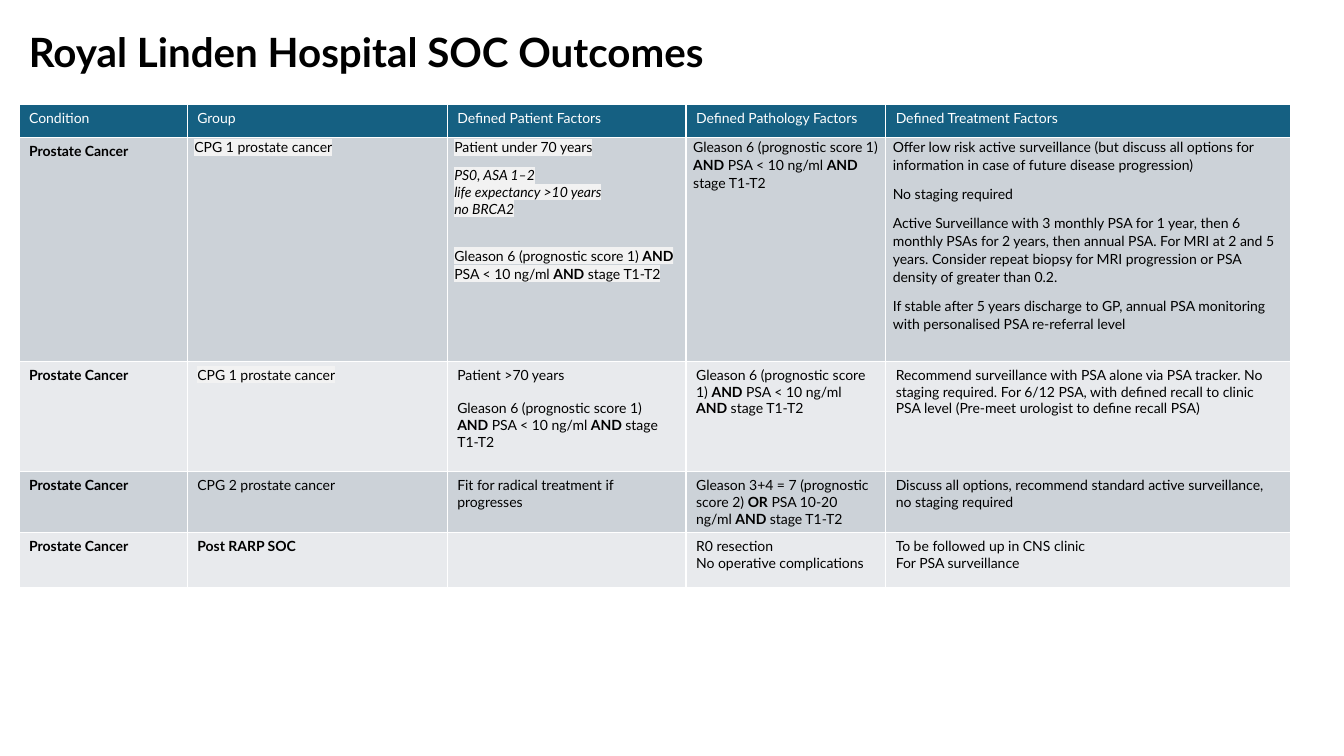
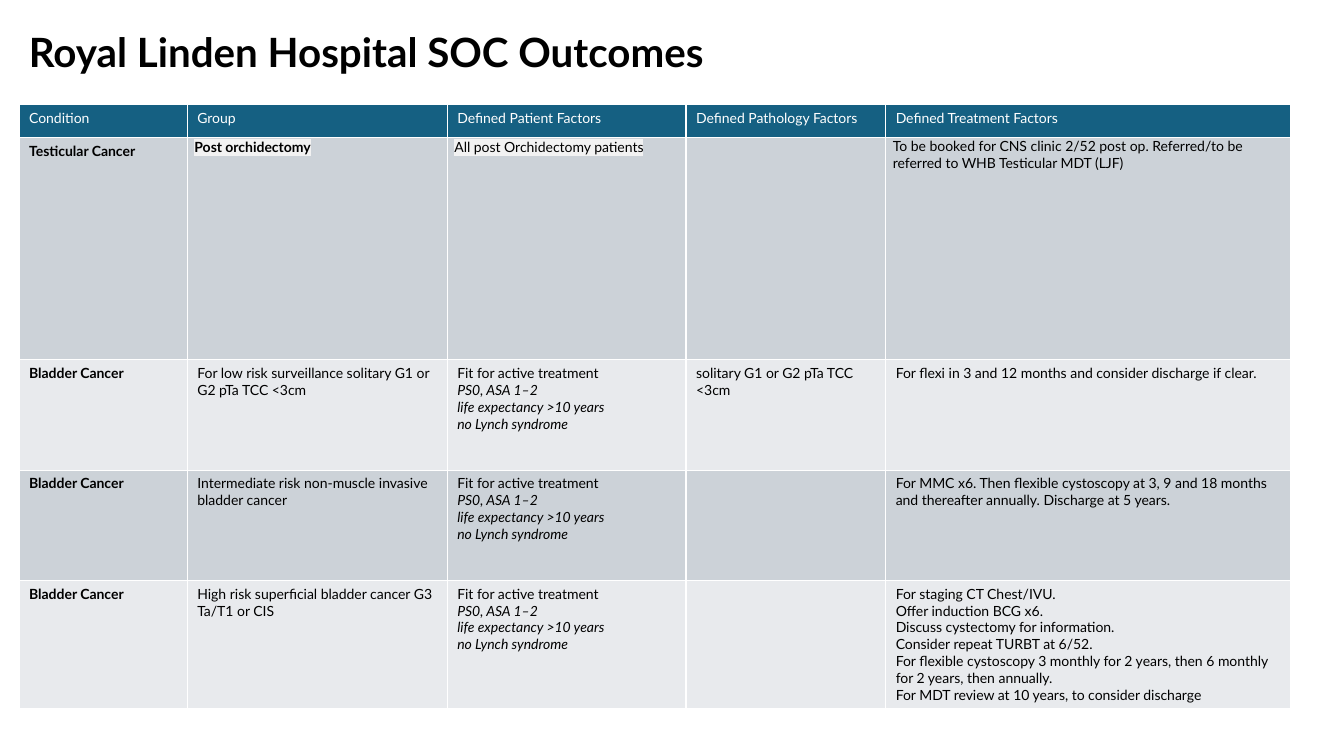
"""Build two slides of hospital outcome tables."""
from dataclasses import dataclass

from lxml import etree
from pptx import Presentation
from pptx.dml.color import RGBColor
from pptx.enum import text
from pptx.oxml import ns
from pptx.util import Cm, Pt


@dataclass(frozen=True)
class Theme:
    font: str = "Lato"
    title: float = 28.8
    body: float = 10
    ink: str = "000000"
    white: str = "FFFFFF"
    head: str = "156082"
    bands: tuple = ("CCD2D8", "E8EAED")
    mark: str = "F2F2F2"
    rule: float = 1


@dataclass
class Para:
    text: str
    slant: bool = False
    line: float = 1
    after: float = 0


@dataclass
class Entry:
    paras: tuple
    tight: bool = False
    mark: bool = False


THEME = Theme()
TITLE = "Royal Linden Hospital SOC Outcomes"
HEADS = ("Condition", "Group", "Defined Patient Factors",
         "Defined Pathology Factors", "Defined Treatment Factors")
WIDTHS = (4.24, 6.55, 6.02, 5.03, 10.21)


def plain(*lines, **look):
    return Entry(tuple(Para(line) for line in lines), **look)


def loose(*lines, mark=False):
    paras = tuple(Para(line, line=1.07, after=8) for line in lines)
    return Entry(paras, tight=True, mark=mark)


def slants(*lines):
    return tuple(Para(line, slant=True) for line in lines)


FITNESS = ("PS0, ASA 1–2", "life expectancy >10 years")
GLEASON = "Gleason 6 (prognostic score 1) *AND* PSA < 10 ng/ml *AND* stage T1-T2"
PROSTATE = plain("*Prostate Cancer*")
BLADDER = plain("*Bladder Cancer*")
ACTIVE = Entry((Para("Fit for active treatment"),
                *slants(*FITNESS, "no Lynch syndrome")))
YOUNG = Entry((Para("Patient under 70 years", line=1.07, after=8),
               *slants(*FITNESS), Para("no BRCA2", True, after=20.8),
               Para(GLEASON, line=1.07, after=8)), tight=True, mark=True)

FIRST = (
    (5.64, PROSTATE, loose("CPG 1 prostate cancer", mark=True), YOUNG,
     loose(GLEASON),
     loose("Offer low risk active surveillance (but discuss all options for "
           "information in case of future disease progression)",
           "No staging required",
           "Active Surveillance with 3 monthly PSA for 1 year, then 6 monthly "
           "PSAs for 2 years, then annual PSA. For MRI at 2 and 5 years. "
           "Consider repeat biopsy for MRI progression or PSA density of "
           "greater than 0.2.",
           "If stable after 5 years discharge to GP, annual PSA monitoring "
           "with personalised PSA re-referral level")),
    (2.78, PROSTATE, plain("CPG 1 prostate cancer", mark=True),
     Entry((Para("Patient >70 years", after=12), Para(GLEASON))),
     plain(GLEASON),
     plain("Recommend surveillance with PSA alone via PSA tracker. No staging "
           "required. For 6/12 PSA, with defined recall to clinic PSA level "
           "(Pre-meet urologist to define recall PSA)")),
    (1.52, PROSTATE, plain("CPG 2 prostate cancer"),
     plain("Fit for radical treatment if progresses"),
     plain("Gleason 3+4 = 7 (prognostic score 2) *OR* PSA 10-20 ng/ml "
           "*AND *stage T1-T2"),
     plain("Discuss all options, recommend standard active surveillance, "
           "no staging required")),
    (1.4, PROSTATE, plain("*Post RARP SOC*"), plain(),
     plain("R0 resection", "No operative complications"),
     plain("To be followed up in CNS clinic", "For PSA surveillance")),
)

SECOND = (
    (5.6, plain("*Testicular Cancer*"),
     loose("*Post orchidectomy*", mark=True),
     loose("All post Orchidectomy patients", mark=True), plain(),
     plain("To be booked for CNS clinic 2/52 post op. Referred/to be referred "
           "to WHB Testicular MDT (LJF)", tight=True)),
    (2.78, BLADDER,
     plain("For low risk surveillance solitary G1 or G2 pTa TCC <3cm"),
     ACTIVE, plain("solitary G1 or G2 pTa TCC <3cm"),
     plain("For flexi in 3 and 12 months and consider discharge if clear.")),
    (2.78, BLADDER,
     plain("Intermediate risk non-muscle invasive bladder cancer"),
     ACTIVE, plain(),
     plain("For MMC x6. Then flexible cystoscopy at 3, 9 and 18 months and "
           "thereafter annually. Discharge at 5 years.")),
    (3.2, BLADDER,
     plain("High risk superficial bladder cancer G3 Ta/T1 or CIS"),
     ACTIVE, plain(),
     plain("For staging CT Chest/IVU.", "Offer induction BCG x6.",
           "Discuss cystectomy for information.",
           "Consider repeat TURBT at 6/52.",
           "For flexible cystoscopy 3 monthly for 2 years, then 6 monthly "
           "for 2 years, then annually.",
           "For MDT review at 10 years, to consider discharge")),
)


def add_run(para, words, size, tint, bold=False, slant=False, mark=False):
    """Append one styled run."""
    run = para.add_run()
    run.text = words
    font = run.font
    font.name, font.size = THEME.font, Pt(size)
    font.bold, font.italic = bold, slant
    font.color.rgb = RGBColor.from_string(tint)
    if mark:
        light = etree.Element(ns.qn("a:highlight"))
        etree.SubElement(light, ns.qn("a:srgbClr"), val=THEME.mark)
        run.font._element.find(ns.qn("a:solidFill")).addnext(light)


def add_title(slide, words):
    """Place the slide title."""
    box = slide.shapes.add_textbox(Cm(0.48), Cm(0.69), Cm(26.75), Cm(1.37))
    frame = box.text_frame
    frame.word_wrap = True
    frame.vertical_anchor = text.MSO_ANCHOR.MIDDLE
    para = frame.paragraphs[0]
    para.line_spacing = 0.9
    add_run(para, words, THEME.title, THEME.ink, bold=True)


def add_rules(cell):
    """Draw the four borders of a cell."""
    props = cell._tc.get_or_add_tcPr()
    for spot, side in enumerate(("a:lnL", "a:lnR", "a:lnT", "a:lnB")):
        line = etree.Element(ns.qn(side), w=str(Pt(THEME.rule)))
        fill = etree.SubElement(line, ns.qn("a:solidFill"))
        etree.SubElement(fill, ns.qn("a:srgbClr"), val=THEME.white)
        props.insert(spot, line)


def fill_cell(cell, entry, back, tint):
    """Fill one cell with its colour, borders and text."""
    cell.fill.solid()
    cell.fill.fore_color.rgb = RGBColor.from_string(back)
    add_rules(cell)
    if entry.tight:
        cell.margin_left = cell.margin_right = Cm(0.18)
        cell.margin_top = cell.margin_bottom = 0
    frame = cell.text_frame
    for rank, item in enumerate(entry.paras):
        para = frame.add_paragraph() if rank else frame.paragraphs[0]
        para.line_spacing = item.line
        para.space_after = Pt(item.after)
        for part, words in enumerate(item.text.split("*")):
            if words:
                add_run(para, words, THEME.body, tint, bold=part % 2 == 1,
                        slant=item.slant, mark=entry.mark)


def add_grid(slide, rows):
    """Place the outcome table under its heading row."""
    lines = ((0.83, *map(plain, HEADS)), *rows)
    high = sum(line[0] for line in lines)
    grid = slide.shapes.add_table(len(lines), len(WIDTHS), Cm(0.48), Cm(2.64),
                                  Cm(sum(WIDTHS)), Cm(high)).table
    grid.first_row = grid.horz_banding = False
    for col, width in zip(grid.columns, WIDTHS):
        col.width = Cm(width)
    for rank, (height, *cells) in enumerate(lines):
        grid.rows[rank].height = Cm(height)
        back = THEME.bands[(rank - 1) % 2] if rank else THEME.head
        tint = THEME.ink if rank else THEME.white
        for col, entry in enumerate(cells):
            fill_cell(grid.cell(rank, col), entry, back, tint)


def main():
    """Build and save the deck."""
    deck = Presentation()
    deck.slide_width, deck.slide_height = Cm(33.87), Cm(19.05)
    for rows in (FIRST, SECOND):
        slide = deck.slides.add_slide(deck.slide_layouts[6])
        add_title(slide, TITLE)
        add_grid(slide, rows)
    deck.save("out.pptx")


if __name__ == "__main__":
    main()
